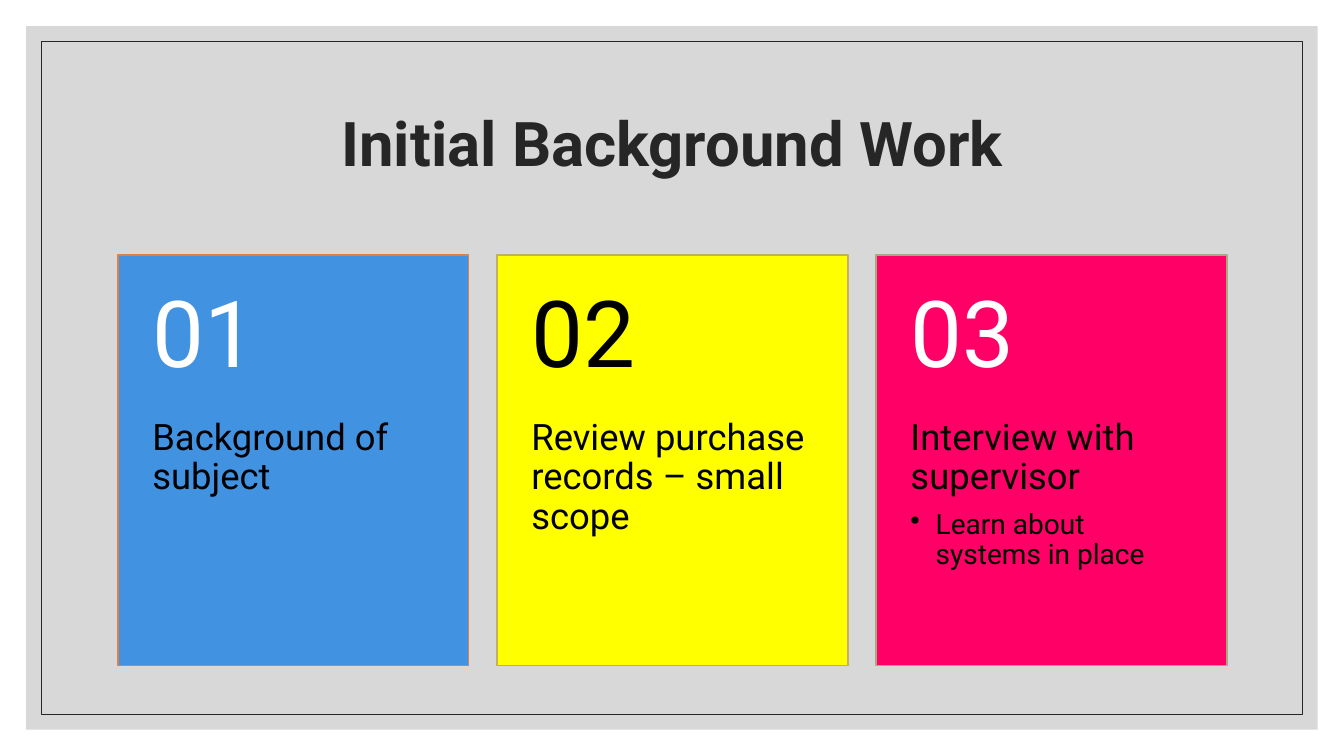
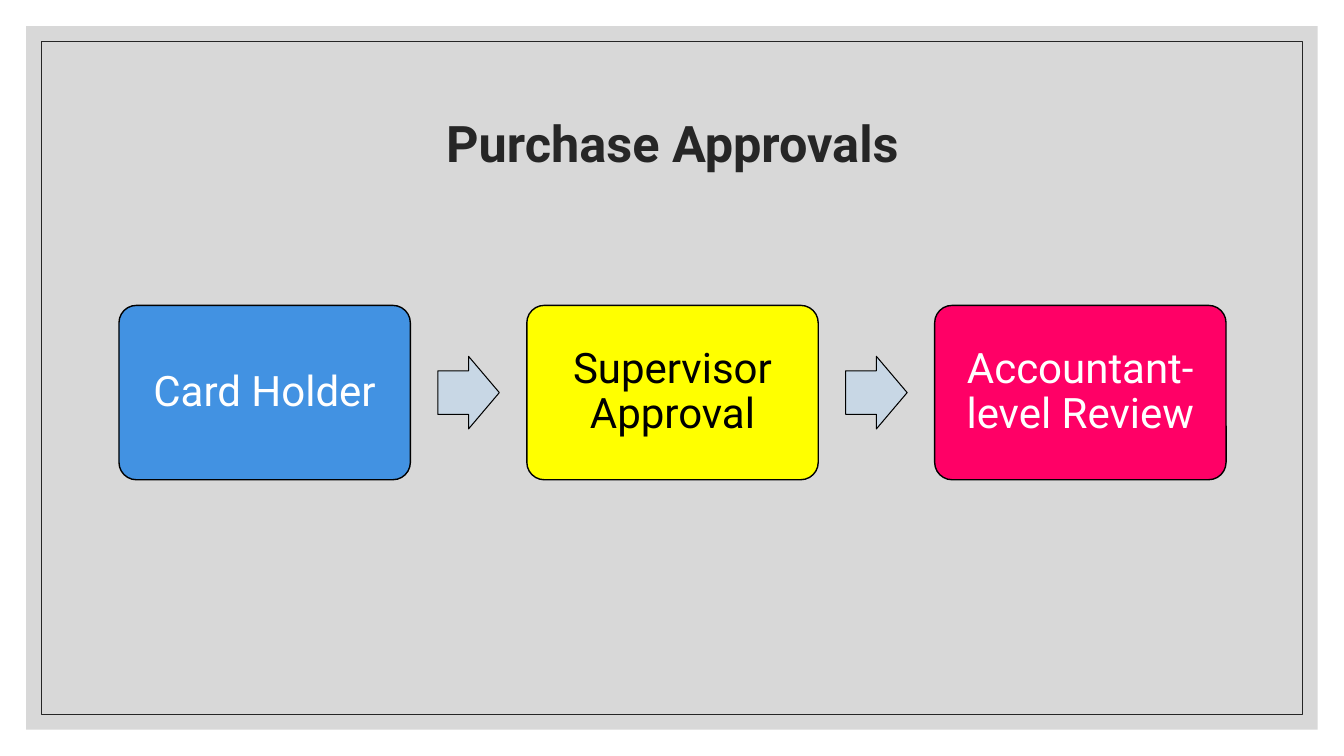
from dataclasses import dataclass

from lxml import etree
from pptx import Presentation
from pptx.dml.color import RGBColor
from pptx.enum.shapes import MSO_SHAPE
from pptx.enum.text import MSO_ANCHOR, PP_ALIGN
from pptx.oxml.ns import qn
from pptx.util import Inches, Pt

RECTANGLE, ROUNDED, ARROW = (
    MSO_SHAPE.RECTANGLE, MSO_SHAPE.ROUNDED_RECTANGLE, MSO_SHAPE.RIGHT_ARROW)
TOP, MIDDLE = MSO_ANCHOR.TOP, MSO_ANCHOR.MIDDLE
LEFT, CENTER = PP_ALIGN.LEFT, PP_ALIGN.CENTER


@dataclass(frozen=True)
class Theme:
    font: str = "Roboto"
    white: str = "FFFFFF"
    black: str = "000000"
    ink: str = "262626"
    panel: str = "BFBFBF"
    panel_opacity: int = 60
    blue: str = "4292E2"
    yellow: str = "FFFF00"
    pink: str = "FF0066"
    arrow: str = "C8D7E5"
    number_size: int = 66
    card_size: int = 26
    bullet_size: int = 20
    step_size: int = 30
    line_spacing: float = 0.9


THEME = Theme()

# Content
CARDS_TITLE = ("Initial Background Work", 44)
CARDS = [
    # number, text, bullets, fill, outline, number colour
    ("01", "Background of subject", [], THEME.blue, "DD8047", THEME.white),
    ("02", "Review purchase records – small scope", [],
     THEME.yellow, "C4AD64", THEME.black),
    ("03", "Interview with supervisor", ["Learn about systems in place"],
     THEME.pink, "A5AB81", THEME.white),
]
STEPS_TITLE = ("Purchase Approvals", 36)
STEPS = [
    # text, fill, text colour
    ("Card Holder", THEME.blue, THEME.white),
    ("Supervisor Approval", THEME.yellow, THEME.black),
    ("Accountant-level Review", THEME.pink, THEME.white),
]

# Layout, in inches
SLIDE_WIDTH, SLIDE_HEIGHT = 13.33, 7.5
PANEL_MARGIN, FRAME_MARGIN = 0.26, 0.41
CONTENT_LEFT, CONTENT_WIDTH = 1.17, 11
TITLE_TOP, TITLE_HEIGHT = 0.7, 1.5
CARD_TOP, CARD_HEIGHT, CARD_GAP = 2.53, 4.07, 0.28
NUMBER_HEIGHT = 0.4 * CARD_HEIGHT
CARD_INSET = 0.34
STEPS_LEFT, STEPS_WIDTH = 1.18, 10.98
STEP_TOP, STEP_WIDTH, STEP_HEIGHT = 3.03, 2.89, 1.73
STEP_INSET = 0.12
ARROW_WIDTH, ARROW_HEIGHT = 0.61, 0.72
BULLET_INDENT = 0.25


def color(value):
    return RGBColor.from_string(value)


def add_box(slide, kind, box, fill=None, line=None, line_width=1, adjustments=()):
    shape = slide.shapes.add_shape(kind, *map(Inches, box))
    shape.shadow.inherit = False
    for index, value in enumerate(adjustments):
        shape.adjustments[index] = value
    if fill:
        shape.fill.solid()
        shape.fill.fore_color.rgb = color(fill)
    else:
        shape.fill.background()
    if line:
        shape.line.color.rgb = color(line)
        shape.line.width = Pt(line_width)
    else:
        shape.line.fill.background()
    return shape


def set_frame(shape, anchor, insets):
    frame = shape.text_frame
    frame.word_wrap = True
    frame.vertical_anchor = anchor
    (frame.margin_left, frame.margin_top,
     frame.margin_right, frame.margin_bottom) = map(Inches, insets)
    return frame


def write(paragraph, text, size, text_color, align=LEFT, bold=False):
    paragraph.text = text
    paragraph.alignment = align
    paragraph.line_spacing = THEME.line_spacing
    font = paragraph.font
    font.name, font.size, font.bold = THEME.font, Pt(size), bold
    font.color.rgb = color(text_color)


def add_text(slide, box, insets, *style, **options):
    shape = slide.shapes.add_textbox(*map(Inches, box))
    write(set_frame(shape, MIDDLE, insets).paragraphs[0], *style, **options)


def add_bullet(frame, text):
    frame.paragraphs[-1].space_after = Pt(0.35 * THEME.card_size)
    paragraph = frame.add_paragraph()
    write(paragraph, text, THEME.bullet_size, THEME.black)
    properties = paragraph._p.get_or_add_pPr()
    properties.set("marL", str(Inches(BULLET_INDENT)))
    properties.set("indent", str(-Inches(BULLET_INDENT)))
    bullet = etree.Element(qn("a:buChar"), char="•")
    # The bullet mark must come before the default run properties
    properties.find(qn("a:defRPr")).addprevious(bullet)


def inner_box(margin):
    return margin, margin, SLIDE_WIDTH - 2 * margin, SLIDE_HEIGHT - 2 * margin


def add_slide(presentation, title, title_size):
    """Blank slide with the shared panel, frame and title."""
    slide = presentation.slides.add_slide(presentation.slide_layouts[6])
    panel = add_box(slide, RECTANGLE, inner_box(PANEL_MARGIN), THEME.panel)
    fill_color = panel._element.spPr.find(qn("a:solidFill"))[0]
    etree.SubElement(fill_color, qn("a:alpha"), val=str(THEME.panel_opacity * 1000))
    add_box(slide, RECTANGLE, inner_box(FRAME_MARGIN), line=THEME.ink, line_width=0.5)
    add_text(slide, (CONTENT_LEFT, TITLE_TOP, CONTENT_WIDTH, TITLE_HEIGHT),
             (0.1, 0.05, 0.1, 0.05), title, title_size, THEME.ink,
             align=CENTER, bold=True)
    return slide


def build_cards(presentation):
    slide = add_slide(presentation, *CARDS_TITLE)
    width = (CONTENT_WIDTH - CARD_GAP * (len(CARDS) - 1)) / len(CARDS)
    for index, (number, text, bullets, fill, line, number_color) in enumerate(CARDS):
        left = CONTENT_LEFT + index * (width + CARD_GAP)
        # Card with its description below the number
        card = add_box(slide, RECTANGLE, (left, CARD_TOP, width, CARD_HEIGHT), fill, line)
        frame = set_frame(card, TOP, (CARD_INSET, NUMBER_HEIGHT, CARD_INSET, 0.36))
        write(frame.paragraphs[0], text, THEME.card_size, THEME.black)
        for bullet in bullets:
            add_bullet(frame, bullet)
        # Number
        add_text(slide, (left, CARD_TOP, width, NUMBER_HEIGHT),
                 (CARD_INSET, 0.18, CARD_INSET, 0.18),
                 number, THEME.number_size, number_color)


def build_steps(presentation):
    slide = add_slide(presentation, *STEPS_TITLE)
    pitch = (STEPS_WIDTH - STEP_WIDTH) / (len(STEPS) - 1)
    arrow_offset = (STEP_WIDTH + pitch - ARROW_WIDTH) / 2
    arrow_top = STEP_TOP + (STEP_HEIGHT - ARROW_HEIGHT) / 2
    for index, (text, fill, text_color) in enumerate(STEPS):
        left = STEPS_LEFT + index * pitch
        # Arrow from the step before
        if index:
            add_box(slide, ARROW,
                    (left - pitch + arrow_offset, arrow_top, ARROW_WIDTH, ARROW_HEIGHT),
                    THEME.arrow, THEME.black, 0.75, (0.6, 0.5))
        # Step
        step = add_box(slide, ROUNDED, (left, STEP_TOP, STEP_WIDTH, STEP_HEIGHT),
                       fill, THEME.black, adjustments=(0.1,))
        frame = set_frame(step, MIDDLE, (STEP_INSET,) * 4)
        write(frame.paragraphs[0], text, THEME.step_size, text_color, align=CENTER)


def main():
    presentation = Presentation()
    presentation.slide_width = Inches(SLIDE_WIDTH)
    presentation.slide_height = Inches(SLIDE_HEIGHT)
    build_cards(presentation)
    build_steps(presentation)
    presentation.save("out.pptx")


if __name__ == "__main__":
    main()
